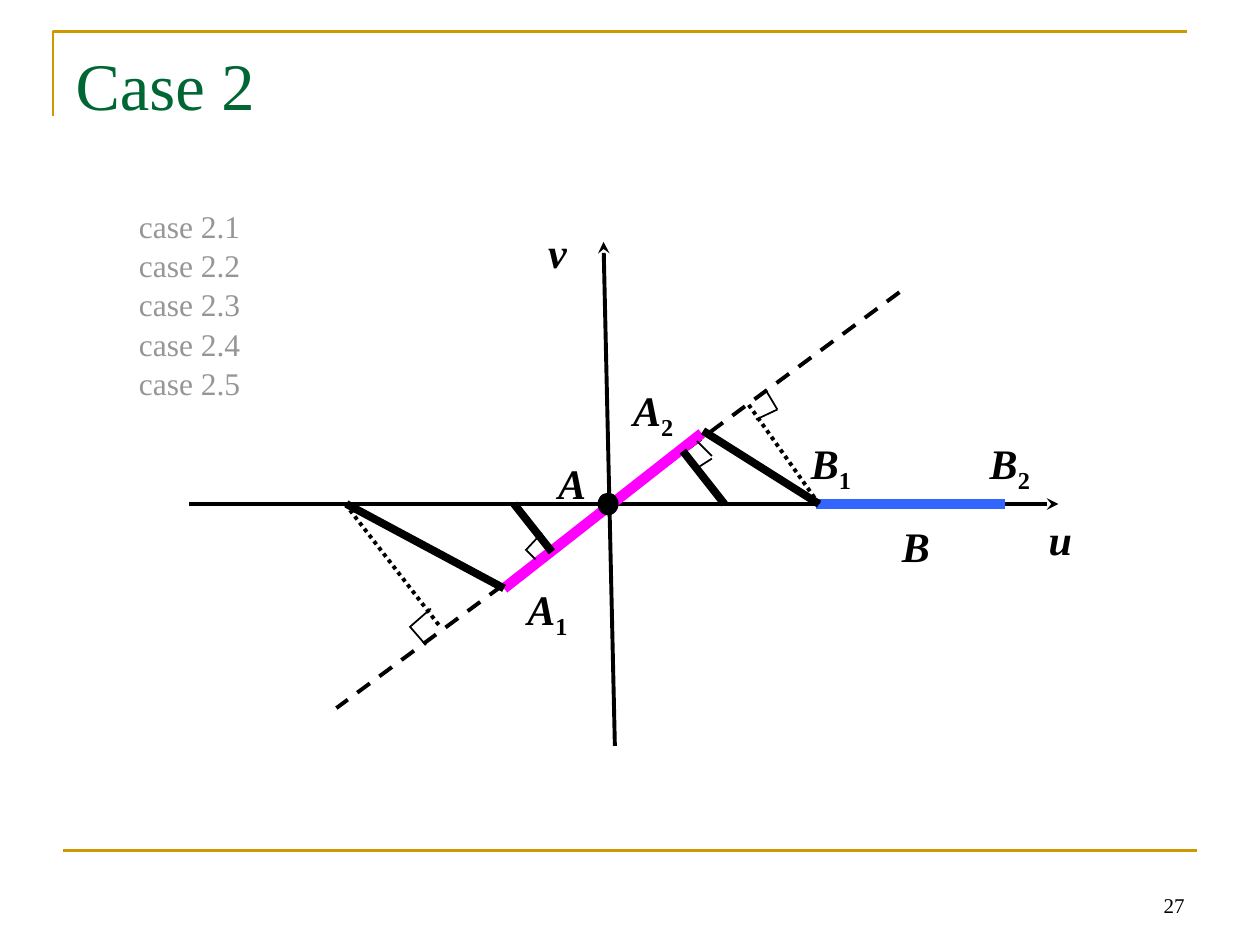
from dataclasses import dataclass
from typing import Optional

from lxml.etree import SubElement
from pptx import Presentation
from pptx.dml.color import RGBColor
from pptx.enum.dml import MSO_LINE
from pptx.enum.shapes import MSO_CONNECTOR, MSO_SHAPE
from pptx.enum.text import MSO_ANCHOR, PP_ALIGN
from pptx.oxml.ns import qn
from pptx.slide import Slide
from pptx.text.text import TextFrame
from pptx.util import Pt


@dataclass(frozen=True)
class Theme:
    font: str = "Times New Roman"
    ink: str = "000000"
    gold: str = "CC9900"
    green: str = "006633"
    grey: str = "969696"
    magenta: str = "FF00FF"
    blue: str = "3366FF"
    title_size: float = 38
    label_size: float = 24
    case_size: float = 18
    number_size: float = 12
    frame: float = 1.5
    axis: float = 2.25
    mark: float = 1
    bold: float = 4.5
    segment: float = 6


THEME = Theme()


@dataclass(frozen=True)
class Stroke:
    x1: float
    y1: float
    x2: float
    y2: float
    width: float = THEME.axis
    color: str = THEME.ink
    dash: Optional[MSO_LINE] = None
    arrow: bool = False


@dataclass(frozen=True)
class Label:
    letter: str
    left: float
    top: float
    width: float
    subscript: str = ""


@dataclass(frozen=True)
class RightAngle:
    """Two short strokes; the second may start slightly off the first's end."""
    start: tuple[float, float]
    corner: tuple[float, float]
    second_start: tuple[float, float]
    end: tuple[float, float]


AXES = [
    Stroke(108, 288, 604.8, 288, arrow=True),
    Stroke(351.36, 426.24, 344.88, 138.24, arrow=True),
    Stroke(514, 167, 192.24, 404.64, dash=MSO_LINE.DASH),
]
SEGMENTS = [
    Stroke(288, 336.24, 401, 247.68, THEME.segment, THEME.magenta),
    Stroke(466.56, 288, 574.56, 288, THEME.segment, THEME.blue),
]
DISTANCES = [
    Stroke(468, 288, 427.68, 231.12, dash=MSO_LINE.ROUND_DOT),
    Stroke(468, 288, 401.76, 246.24, THEME.bold),
    Stroke(414, 288, 390.24, 257.76, THEME.bold),
    Stroke(293.76, 288, 315.36, 315.36, THEME.bold),
    Stroke(197.28, 288, 251.28, 357.84, dash=MSO_LINE.ROUND_DOT),
    Stroke(288, 336.24, 198, 288, THEME.bold),
]
RIGHT_ANGLES = [
    RightAngle((432, 239.76), (444.24, 234), (444.24, 234), (437.76, 223.2)),
    RightAngle((398.16, 252), (406.8, 260.64), (406.8, 262.08), (398.88, 267.12)),
    RightAngle((309.6, 304.56), (300.24, 314.64), (300.96, 314.64), (306, 319.68)),
    RightAngle((246.24, 347.76), (234.72, 357.84), (234, 357.84), (243.36, 368.64)),
]
LABELS = [
    Label("u", 591.84, 290.16, 28),
    Label("v", 306, 126, 25.2),
    Label("A", 311.76, 257.76, 30.24),
    Label("A", 293.76, 329.76, 38.16, "1"),
    Label("A", 354.24, 216, 38.16, "2"),
    Label("B", 455.76, 246.24, 38.16, "1"),
    Label("B", 558, 246.24, 38.16, "2"),
    Label("B", 508.32, 293.76, 30.24),
]
CASES = [f"case 2.{n}" for n in range(1, 6)]


def draw_stroke(slide: Slide, stroke: Stroke) -> None:
    connector = slide.shapes.add_connector(
        MSO_CONNECTOR.STRAIGHT,
        Pt(stroke.x1), Pt(stroke.y1), Pt(stroke.x2), Pt(stroke.y2))
    line = connector.line
    line.width = Pt(stroke.width)
    line.color.rgb = RGBColor.from_string(stroke.color)
    if stroke.dash is not None:
        line.dash_style = stroke.dash
    properties = connector._element.spPr
    if stroke.arrow:
        SubElement(properties.find(qn("a:ln")), qn("a:tailEnd"), type="stealth")
    SubElement(properties, qn("a:effectLst"))


def draw_right_angle(slide: Slide, angle: RightAngle) -> None:
    draw_stroke(slide, Stroke(*angle.start, *angle.corner, THEME.mark))
    draw_stroke(slide, Stroke(*angle.second_start, *angle.end, THEME.mark))


def add_frame(slide: Slide, left: float, top: float, width: float,
              height: float, wrap: bool = False) -> TextFrame:
    frame = slide.shapes.add_textbox(
        Pt(left), Pt(top), Pt(width), Pt(height)).text_frame
    frame.word_wrap = wrap
    return frame


def add_run(paragraph, text: str, size: float, color: str = THEME.ink,
            bold: bool = False, italic: bool = False):
    run = paragraph.add_run()
    run.text = text
    font = run.font
    font.name, font.size = THEME.font, Pt(size)
    font.bold, font.italic = bold, italic
    font.color.rgb = RGBColor.from_string(color)
    return run


def draw_label(slide: Slide, label: Label) -> None:
    paragraph = add_frame(
        slide, label.left, label.top, label.width, 36).paragraphs[0]
    paragraph.alignment = PP_ALIGN.CENTER
    add_run(paragraph, label.letter, THEME.label_size, bold=True, italic=True)
    if label.subscript:
        subscript = add_run(paragraph, label.subscript, THEME.label_size, bold=True)
        subscript._r.get_or_add_rPr().set("baseline", "-25000")


def draw_frame_and_number(slide: Slide) -> None:
    builder = slide.shapes.build_freeform(Pt(30.24), Pt(66.24))
    builder.add_line_segments(
        [(Pt(30.24), Pt(18)), (Pt(678.24), Pt(18))], close=False)
    corner = builder.convert_to_shape()
    corner.shadow.inherit = False
    corner.fill.background()
    corner.line.width = Pt(THEME.frame)
    corner.line.color.rgb = RGBColor.from_string(THEME.gold)
    draw_stroke(slide, Stroke(36, 486, 684, 486, THEME.frame, THEME.gold))
    number = add_frame(slide, 516.24, 491.76, 167.76, 36, wrap=True)
    number.vertical_anchor = MSO_ANCHOR.BOTTOM
    number.paragraphs[0].alignment = PP_ALIGN.RIGHT
    add_run(number.paragraphs[0], "27", THEME.number_size)


def draw_title(slide: Slide) -> None:
    title = slide.shapes.title
    title.left, title.top, title.width, title.height = map(Pt, (36, 21.6, 648, 90))
    title.text_frame.vertical_anchor = MSO_ANCHOR.TOP
    paragraph = title.text_frame.paragraphs[0]
    paragraph.alignment = PP_ALIGN.LEFT
    add_run(paragraph, "Case 2", THEME.title_size, THEME.green)


def draw_cases(slide: Slide) -> None:
    frame = add_frame(slide, 72, 113.76, 72.72, 115.2)
    for index, case in enumerate(CASES):
        paragraph = frame.add_paragraph() if index else frame.paragraphs[0]
        paragraph.alignment = PP_ALIGN.CENTER
        paragraph.line_spacing = 1.04
        add_run(paragraph, case, THEME.case_size, THEME.grey)


def draw_origin(slide: Slide) -> None:
    origin = slide.shapes.add_shape(
        MSO_SHAPE.OVAL, Pt(342), Pt(282), Pt(11), Pt(12))
    origin.shadow.inherit = False
    origin.fill.solid()
    origin.fill.fore_color.rgb = RGBColor.from_string(THEME.ink)
    origin.line.width = Pt(THEME.mark)
    origin.line.color.rgb = RGBColor.from_string(THEME.ink)


def main() -> None:
    deck = Presentation()
    deck.slide_width, deck.slide_height = Pt(720), Pt(540)
    slide = deck.slides.add_slide(deck.slide_layouts.get_by_name("Title Only"))
    draw_frame_and_number(slide)
    draw_title(slide)
    for stroke in AXES + SEGMENTS:
        draw_stroke(slide, stroke)
    for label in LABELS:
        draw_label(slide, label)
    draw_cases(slide)
    for stroke in DISTANCES:
        draw_stroke(slide, stroke)
    for angle in RIGHT_ANGLES:
        draw_right_angle(slide, angle)
    draw_origin(slide)
    deck.save("out.pptx")


if __name__ == "__main__":
    main()
